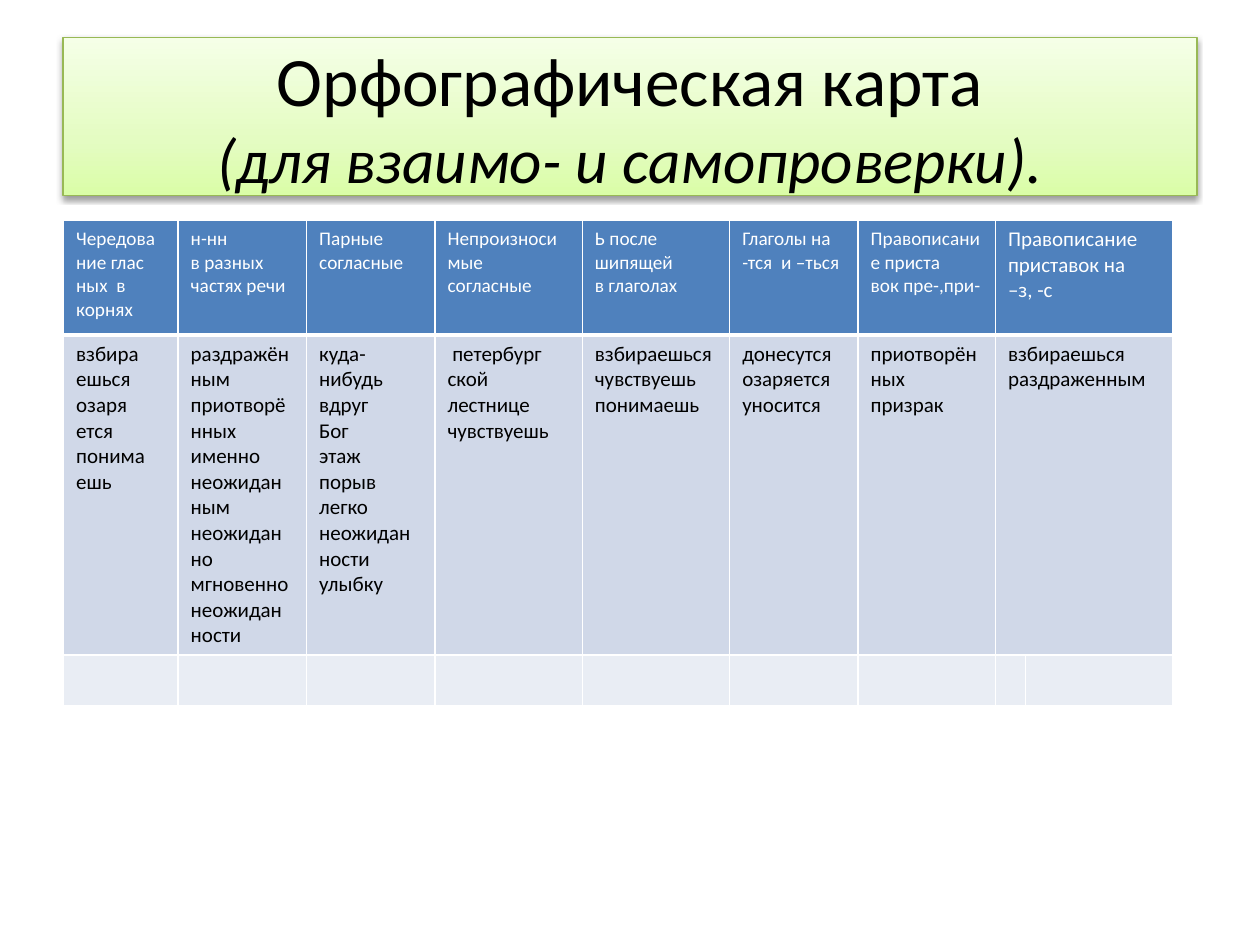
from dataclasses import dataclass

from lxml import etree
from pptx import Presentation
from pptx.dml.color import RGBColor
from pptx.enum.shapes import MSO_SHAPE
from pptx.enum.text import MSO_ANCHOR, PP_ALIGN
from pptx.oxml.ns import qn
from pptx.util import Pt

RECTANGLE = MSO_SHAPE.RECTANGLE
MIDDLE = MSO_ANCHOR.MIDDLE
CENTER = PP_ALIGN.CENTER


@dataclass(frozen=True)
class Theme:
    font: str = "Calibri"
    ink: str = "000000"
    paper: str = "FFFFFF"
    title_line: str = "98B955"
    title_stops: tuple = ((0, "DAFDA7"), (35, "E4FCC2"), (100, "F5FFE7"))
    header_fill: str = "4F81BD"
    words_fill: str = "D0D8E8"
    spare_fill: str = "E9EDF4"
    title_size: float = 39.6
    subtitle_size: float = 36
    header_size: float = 11
    words_size: float = 12


THEME = Theme()

COLUMN_WIDTHS = (65.5, 73.4, 73.4, 84.2, 84.2, 73.4, 78.5, 16.6, 84.2)
ROW_HEIGHTS = (65.5, 29.2, 29.2)

# Each rule: its heading lines and the words that illustrate it
RULES = (
    (("Чередование глас", "ных  в корнях"),
     ("взбира", "ешься", "озаря", "ется", "понима", "ешь")),
    (("н-нн", "в разных частях речи"),
     ("раздражённым", "приотворённых", "именно  неожидан", "ным", "неожидан",
      "но", "мгновенно", "неожидан", "ности")),
    (("Парные согласные",),
     ("куда-нибудь", "вдруг", "Бог", "этаж", "порыв", "легко", "неожидан",
      "ности", "улыбку")),
    (("Непроизносимые согласные",),
     (" петербург", "ской", "лестнице", "чувствуешь")),
    (("Ь после шипящей", "в глаголах"),
     ("взбираешься", "чувствуешь", "понимаешь")),
    (("Глаголы на", "-тся  и –ться"),
     ("донесутся", "озаряется", "уносится")),
    (("Правописание приста", "вок пре-,при-"),
     ("приотворённых", "призрак")),
    (("Правописание приставок на", "–з, -с"),
     ("взбираешься", "раздраженным")),
)


def rgb(color):
    return RGBColor.from_string(color)


def add_color(parent, color):
    return etree.SubElement(parent, qn("a:srgbClr"), val=color)


def style_font(font, size, color):
    font.name = THEME.font
    font.size = Pt(size)
    font.color.rgb = rgb(color)


def fill_gradient(shape, stops):
    """Run the stops from the bottom edge to the top edge."""
    shape.fill.gradient()
    shape.fill.gradient_angle = 90
    stop_list = next(shape._element.spPr.iter(qn("a:gsLst")))
    for stop in list(stop_list):
        stop_list.remove(stop)
    for percent, color in stops:
        stop = etree.SubElement(stop_list, qn("a:gs"), pos=str(percent * 1000))
        add_color(stop, color)


def add_drop_shadow(shape, blur, distance, opacity):
    shape.shadow.inherit = False
    effects = shape._element.spPr.find(qn("a:effectLst"))
    shadow = etree.SubElement(
        effects, qn("a:outerShdw"), blurRad=str(Pt(blur)), dist=str(Pt(distance)),
        dir="5400000", rotWithShape="0")
    etree.SubElement(add_color(shadow, THEME.ink), qn("a:alpha"),
                     val=str(opacity * 1000))


def add_title(slide):
    banner = slide.shapes.add_shape(RECTANGLE, Pt(36), Pt(21.6), Pt(648), Pt(90))
    fill_gradient(banner, THEME.title_stops)
    banner.line.color.rgb = rgb(THEME.title_line)
    banner.line.width = Pt(0.75)
    add_drop_shadow(banner, blur=3.1, distance=1.6, opacity=38)

    banner.text_frame.word_wrap = True
    banner.text_frame.vertical_anchor = MIDDLE
    paragraph = banner.text_frame.paragraphs[0]
    paragraph.alignment = CENTER
    heading = paragraph.add_run()
    heading.text = "Орфографическая карта"
    style_font(heading.font, THEME.title_size, THEME.ink)
    paragraph.add_line_break()
    purpose = paragraph.add_run()
    purpose.text = "(для взаимо- и самопроверки)."
    style_font(purpose.font, THEME.subtitle_size, THEME.ink)
    purpose.font.italic = True


def set_borders(cell, top, bottom):
    """Draw white cell borders; top and bottom are widths in points."""
    properties = cell._tc.get_or_add_tcPr()
    sides = (("a:lnL", 1), ("a:lnR", 1), ("a:lnT", top), ("a:lnB", bottom))
    for position, (tag, width) in enumerate(sides):
        border = etree.Element(qn(tag), w=str(Pt(width)))
        add_color(etree.SubElement(border, qn("a:solidFill")), THEME.paper)
        properties.insert(position, border)


def write_cell(cell, lines, size, color):
    cell.text = "\n".join(lines)
    for paragraph in cell.text_frame.paragraphs:
        style_font(paragraph.font, size, color)


def add_rule_table(slide):
    table = slide.shapes.add_table(
        len(ROW_HEIGHTS), len(COLUMN_WIDTHS), Pt(36.3), Pt(126),
        Pt(sum(COLUMN_WIDTHS)), Pt(sum(ROW_HEIGHTS))).table
    for column, width in zip(table.columns, COLUMN_WIDTHS):
        column.width = Pt(width)
    row_styles = ((THEME.header_fill, 1, 3), (THEME.words_fill, 3, 1),
                  (THEME.spare_fill, 1, 1))
    for row, height, (fill, top, bottom) in zip(table.rows, ROW_HEIGHTS, row_styles):
        row.height = Pt(height)
        for cell in row.cells:
            cell.fill.solid()
            cell.fill.fore_color.rgb = rgb(fill)
            set_borders(cell, top, bottom)

    last = len(RULES) - 1
    for row in (0, 1):
        table.cell(row, last).merge(table.cell(row, last + 1))
    for index, (heading, words) in enumerate(RULES):
        heading_size = THEME.words_size if index == last else THEME.header_size
        write_cell(table.cell(0, index), heading, heading_size, THEME.paper)
        table.cell(0, index).text_frame.word_wrap = True
        for paragraph in table.cell(0, index).text_frame.paragraphs:
            paragraph.font.bold = False
        write_cell(table.cell(1, index), words, THEME.words_size, THEME.ink)


def main():
    presentation = Presentation()
    presentation.slide_width = Pt(720)
    presentation.slide_height = Pt(540)
    slide = presentation.slides.add_slide(presentation.slide_layouts[6])
    add_title(slide)
    add_rule_table(slide)
    presentation.save("out.pptx")


if __name__ == "__main__":
    main()
